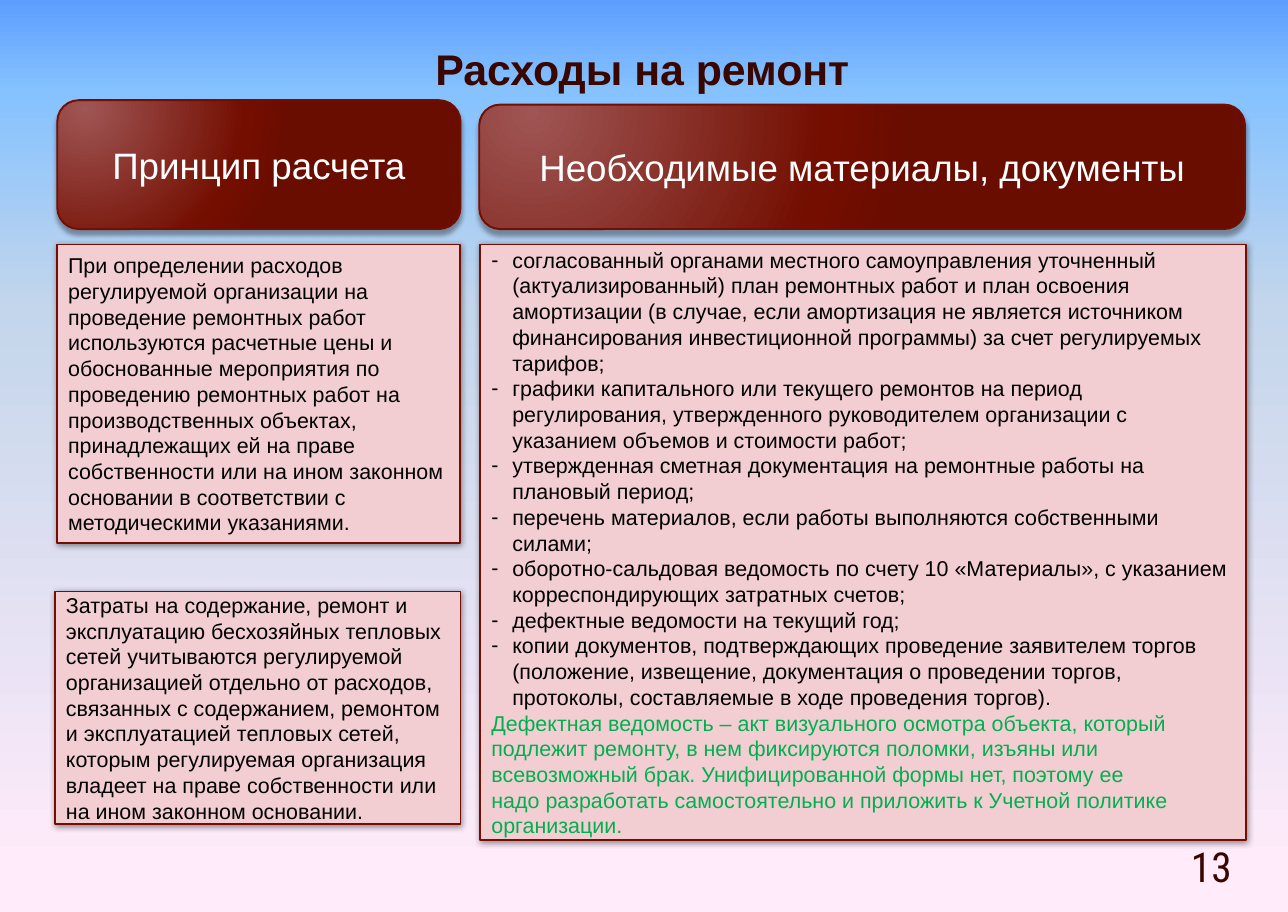
from dataclasses import dataclass

from lxml import etree
from pptx import Presentation
from pptx.dml.color import RGBColor
from pptx.enum.shapes import MSO_SHAPE
from pptx.enum.text import MSO_ANCHOR, MSO_AUTO_SIZE, PP_ALIGN
from pptx.oxml import parse_xml
from pptx.oxml.ns import qn
from pptx.util import Inches, Pt

RECT, ROUND = MSO_SHAPE.RECTANGLE, MSO_SHAPE.ROUNDED_RECTANGLE
MIDDLE, NO_FIT = MSO_ANCHOR.MIDDLE, MSO_AUTO_SIZE.NONE
LEFT, CENTER = PP_ALIGN.LEFT, PP_ALIGN.CENTER

TITLE = "Расходы на ремонт"
NUMBER = "13"
HEADS = [
    ("Принцип расчета", (0.52, 0.91, 3.66, 1.17)),
    ("Необходимые материалы, документы", (4.35, 0.95, 6.95, 1.13)),
]
RULES = [
    ("При определении расходов регулируемой организации на проведение ремонтных работ "
     "используются расчетные цены и обоснованные мероприятия по проведению ремонтных работ "
     "на производственных объектах, принадлежащих ей на праве собственности или на ином "
     "законном основании в соответствии с методическими указаниями.",
     (0.52, 2.22, 3.66, 2.71)),
    ("Затраты на содержание, ремонт и эксплуатацию бесхозяйных тепловых сетей учитываются "
     "регулируемой организацией отдельно от расходов, связанных с содержанием, ремонтом и "
     "эксплуатацией тепловых сетей, которым регулируемая организация владеет на праве "
     "собственности или на ином законном основании.",
     (0.5, 5.37, 3.68, 2.11)),
]
PAPERS = [
    "согласованный органами местного самоуправления уточненный (актуализированный) план "
    "ремонтных работ и план освоения амортизации (в случае, если амортизация не является "
    "источником финансирования инвестиционной программы) за счет регулируемых тарифов;",
    "графики капитального или текущего ремонтов на период регулирования, утвержденного "
    "руководителем организации с указанием объемов и стоимости работ;",
    "утвержденная сметная документация на ремонтные работы на плановый период;",
    "перечень материалов, если работы выполняются собственными силами;",
    "оборотно-сальдовая ведомость по счету 10 «Материалы», с указанием корреспондирующих "
    "затратных счетов;",
    "дефектные ведомости на текущий год;",
    "копии документов, подтверждающих проведение заявителем торгов (положение, извещение, "
    "документация о проведении торгов, протоколы, составляемые в ходе проведения торгов).",
]
NOTES = [
    "Дефектная ведомость – акт визуального осмотра объекта, который подлежит ремонту, в нем "
    "фиксируются поломки, изъяны или всевозможный брак. Унифицированной формы нет, поэтому ее",
    "надо разработать самостоятельно и приложить к Учетной политике организации.",
]


@dataclass(frozen=True)
class Theme:
    font: str = "Arial"
    digit: str = "Roboto Condensed"
    dark: str = "3A0700"
    edge: str = "730E00"
    pink: str = "F2CED2"
    black: str = "000000"
    white: str = "FFFFFF"
    green: str = "00B050"
    sky: tuple = ((0, "5E9EFF"), (10, "85C2FF"), (34, "C4D6EB"), (95, "FFEBFA"))
    wine: tuple = ((0, "9F5554"), (76, "730E00"), (100, "680D00"))
    title: int = 28
    page: int = 27
    head: int = 24
    body: int = 14


THEME = Theme()
SPACE = 'xmlns:a="http://schemas.openxmlformats.org/drawingml/2006/main"'
DOWN = '<a:lin ang="5400000" scaled="0"/>'
GLOW = '<a:path path="circle"><a:fillToRect l="15000" t="15000" r="100000" b="100000"/></a:path>'


def blend(fill, node, stops, shade):
    fill.solid()
    marks = "".join(f'<a:gs pos="{pos * 1000}"><a:srgbClr val="{tone}"/></a:gs>'
                    for pos, tone in stops)
    solid = node.find(".//" + qn("a:solidFill"))
    grad = parse_xml(f'<a:gradFill {SPACE} rotWithShape="1"><a:gsLst>{marks}</a:gsLst>'
                     f'{shade}</a:gradFill>')
    solid.getparent().replace(solid, grad)


def place(shape, box):
    shape.left, shape.top, shape.width, shape.height = map(Inches, box)


def frame(shape, alpha, blur, dist, angle):
    shape.line.color.rgb = RGBColor.from_string(THEME.edge)
    shape.line.width = Pt(1.25)
    shape.shadow.inherit = False
    effects = shape.element.spPr.find(qn("a:effectLst"))
    effects.append(parse_xml(
        f'<a:outerShdw {SPACE} blurRad="{Pt(blur)}" dist="{Pt(dist)}" dir="{angle * 60000}" '
        f'algn="ctr" rotWithShape="0"><a:srgbClr val="{THEME.black}">'
        f'<a:alpha val="{alpha * 1000}"/></a:srgbClr></a:outerShdw>'))


def panel(shape):
    shape.fill.solid()
    shape.fill.fore_color.rgb = RGBColor.from_string(THEME.pink)
    frame(shape, 40, 4, 1, 88)


def write(shape, lines, size, tone, align=LEFT, font=THEME.font, bold=False, wrap=True):
    text = shape.text_frame
    text.text = "\n".join(lines)
    text.word_wrap = wrap
    text.auto_size = NO_FIT
    text.vertical_anchor = MIDDLE
    for para in text.paragraphs:
        para.alignment = align
        para.space_before = Pt(0)
        para.font.name = font
        para.font.size = Pt(size)
        para.font.bold = bold
        para.font.color.rgb = RGBColor.from_string(tone)


def mark(para, dash):
    props = para._p.get_or_add_pPr()
    indent = Inches(0.19) if dash else 0
    props.set("marL", str(indent))
    props.set("indent", str(-indent))
    bullet = etree.Element(qn("a:buChar" if dash else "a:buNone"))
    if dash:
        bullet.set("char", "-")
    props.find(qn("a:defRPr")).addprevious(bullet)


def main():
    deck = Presentation()
    deck.slide_width, deck.slide_height = Inches(11.69), Inches(8.28)
    slide = deck.slides.add_slide(deck.slide_layouts[1])
    shapes = slide.shapes
    blend(slide.background.fill, slide.element, THEME.sky, DOWN)

    title = shapes.title
    place(title, (3.83, 0.34, 4, 0.57))
    write(title, [TITLE], THEME.title, THEME.dark, CENTER, bold=True, wrap=False)

    for label, box in HEADS:
        head = shapes.add_shape(ROUND, *map(Inches, box))
        blend(head.fill, head.element.spPr, THEME.wine, GLOW)
        frame(head, 35, 3, 3, 90)
        write(head, [label], THEME.head, THEME.white, CENTER)

    for rule, box in RULES:
        card = shapes.add_shape(RECT, *map(Inches, box))
        panel(card)
        write(card, [rule], THEME.body, THEME.black)

    body = slide.placeholders[1]
    place(body, (4.36, 2.22, 6.95, 5.41))
    panel(body)
    write(body, PAPERS + NOTES, THEME.body, THEME.black)
    for index, para in enumerate(body.text_frame.paragraphs):
        dash = index < len(PAPERS)
        mark(para, dash)
        if not dash:
            para.font.color.rgb = RGBColor.from_string(THEME.green)

    page = shapes.add_textbox(*map(Inches, (10.51, 7.64, 0.97, 0.44)))
    text = page.text_frame
    text.margin_left = text.margin_top = text.margin_right = text.margin_bottom = 0
    write(page, [NUMBER], THEME.page, THEME.dark, CENTER, THEME.digit)

    deck.save("out.pptx")


if __name__ == "__main__":
    main()
